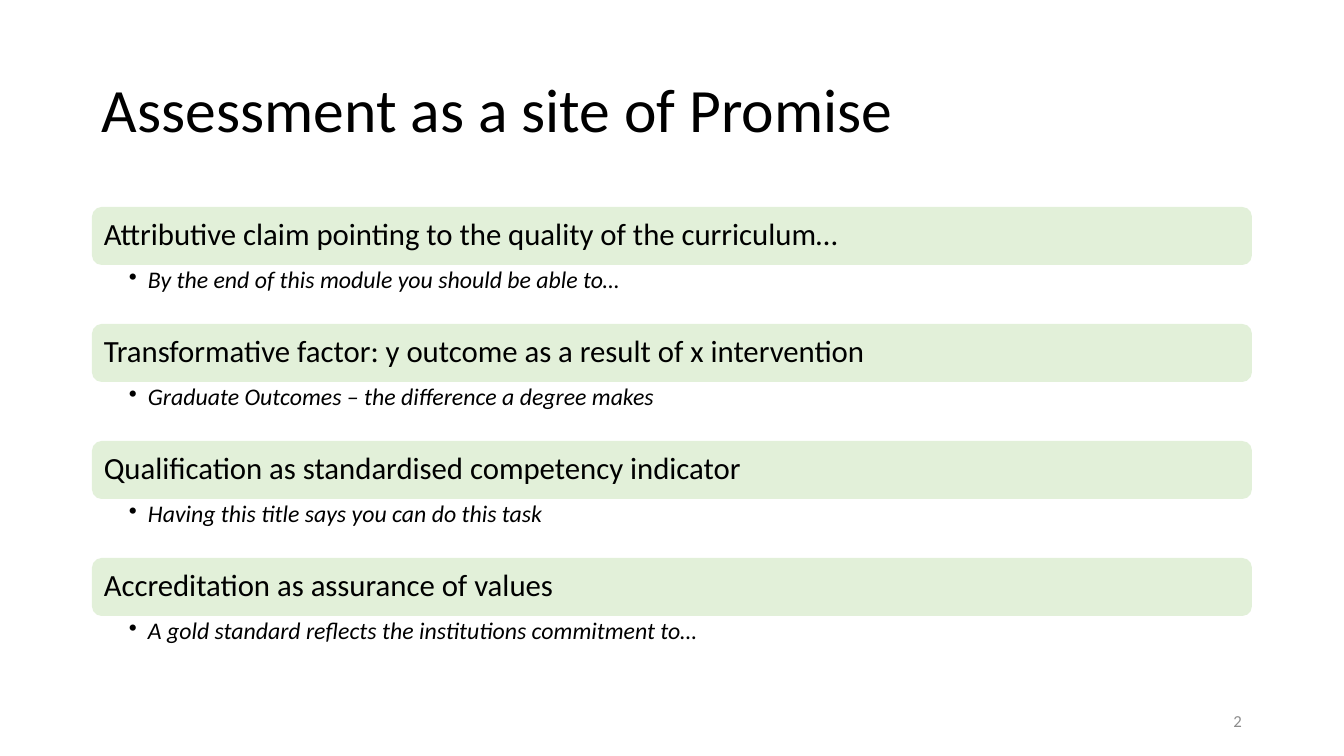
from pptx import Presentation, util as u
from pptx.dml.color import RGBColor
from pptx.enum import shapes, text
from pptx.oxml.ns import qn
from lxml import etree

TITLE = "Assessment as a site of Promise"
PROMISES = [
    ("Attributive claim pointing to the quality of the curriculum…",
     "By the end of this module you should be able to…"),
    ("Transformative factor: y outcome as a result of x intervention",
     "Graduate Outcomes – the difference a degree makes"),
    ("Qualification as standardised competency indicator",
     "Having this title says you can do this task"),
    ("Accreditation as assurance of values",
     "A gold standard reflects the institutions commitment to…"),
]
PAGE = "2"

COLORS = {"ink": "000000", "bar": "E2F0D9", "page": "8C8C8C"}
FONT = "Calibri"
SLIDE_W, SLIDE_H = 1344, 756
LEFT, WIDTH = 92, 1160
FIRST_TOP, PITCH = 207, 117
BAR_H, DETAIL_H = 58, 59
BULLET_INDENT = 19


def px(n):
    return u.Emu(round(n * 12192000 / SLIDE_W))


def color(name):
    return RGBColor.from_string(COLORS[name])


def add_bullet(p):
    """Give the paragraph a round bullet with a hanging indent."""
    pPr = p._p.get_or_add_pPr()
    pPr.set("marL", str(px(BULLET_INDENT)))
    pPr.set("indent", str(-px(BULLET_INDENT)))
    etree.SubElement(pPr, qn("a:buChar")).set("char", "•")


def write(sp, words, size, ink="ink", italic=False, bullet=False, spacing=0.9,
          align=text.PP_ALIGN.LEFT, anchor=text.MSO_ANCHOR.MIDDLE,
          insets=(10, 5, 10, 5)):
    tf = sp.text_frame
    tf.word_wrap = True
    tf.vertical_anchor = anchor
    tf.margin_left, tf.margin_top, tf.margin_right, tf.margin_bottom = map(px, insets)
    p = tf.paragraphs[0]
    if bullet:
        add_bullet(p)
    p.alignment = align
    p.line_spacing = spacing
    r = p.add_run()
    r.text = words
    r.font.name, r.font.size, r.font.italic = FONT, u.Pt(size), italic
    r.font.color.rgb = color(ink)


def add_box(s, *frame):
    return s.shapes.add_textbox(*map(px, frame))


def add_bar(s, *frame):
    sp = s.shapes.add_shape(shapes.MSO_SHAPE.ROUNDED_RECTANGLE, *map(px, frame))
    sp.shadow.inherit = False
    sp.fill.solid()
    sp.fill.fore_color.rgb = color("bar")
    sp.line.fill.background()
    return sp


def main():
    prs = Presentation()
    prs.slide_width, prs.slide_height = px(SLIDE_W), px(SLIDE_H)
    s = prs.slides.add_slide(prs.slide_layouts[6])

    write(add_box(s, LEFT, 40, WIDTH, 146), TITLE, 44)
    for i, (claim, detail) in enumerate(PROMISES):
        top = FIRST_TOP + i * PITCH
        write(add_bar(s, LEFT, top, WIDTH, BAR_H), claim, 22, insets=(9, 6, 9, 6))
        write(add_box(s, LEFT, top + BAR_H, WIDTH, DETAIL_H), detail, 17,
              italic=True, bullet=True, anchor=text.MSO_ANCHOR.TOP,
              insets=(37, 3, 17, 3))
    write(add_box(s, 950, 701, 302, 40), PAGE, 12, ink="page", spacing=1.0,
          align=text.PP_ALIGN.RIGHT)

    prs.save("out.pptx")


if __name__ == "__main__":
    main()
